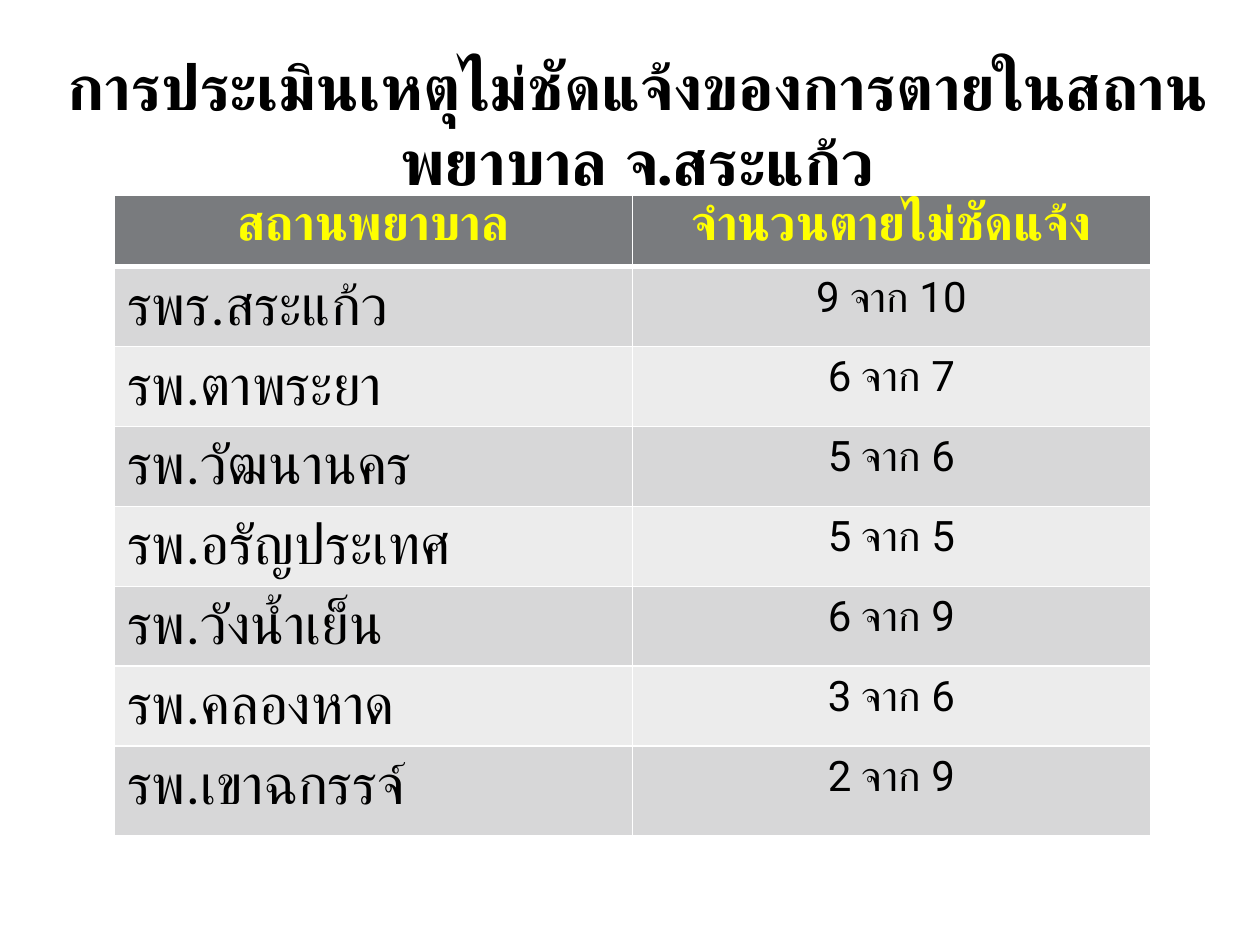
from typing import NamedTuple

from lxml.etree import SubElement
from pptx import Presentation
from pptx.dml.color import RGBColor
from pptx.enum.lang import MSO_LANGUAGE_ID as Lang
from pptx.enum.text import MSO_ANCHOR as Anchor, PP_ALIGN as Align
from pptx.oxml.ns import qn
from pptx.util import Inches, Pt

COLORS = {
    "text": "000000",
    "header_text": "FFFF00",
    "header": "797B7E",
    "odd_row": "D7D7D8",
    "even_row": "ECECEC",
    "border": "FFFFFF",
}


class Hospital(NamedTuple):
    name: str
    unclear: int
    deaths: int
    height: float = 0.5


HEADINGS = ("สถานพยาบาล", "จำนวนตายไม่ชัดแจ้ง")
HOSPITALS = (
    Hospital("รพร.สระแก้ว", 9, 10),
    Hospital("รพ.ตาพระยา", 6, 7),
    Hospital("รพ.วัฒนานคร", 5, 6),
    Hospital("รพ.อรัญประเทศ", 5, 5),
    Hospital("รพ.วังน้ำเย็น", 6, 9),
    Hospital("รพ.คลองหาด", 3, 6, 0.6),
    Hospital("รพ.เขาฉกรรจ์", 2, 9, 0.71),
)


def write(frame, text: str, *, size: float, font: str = "Roboto", color: str = "text",
          bold: bool = False, align: Align = Align.CENTER) -> None:
    paragraph = frame.paragraphs[0]
    paragraph.alignment = align
    run = paragraph.add_run()
    run.text = text
    run.font.name = font
    run.font.size = Pt(size)
    run.font.bold = bold
    run.font.language_id = Lang.THAI
    run.font.color.rgb = RGBColor.from_string(COLORS[color])


def paint_cell(cell, fill: str, top: float = 1, bottom: float = 1) -> None:
    cell.fill.solid()
    cell.fill.fore_color.rgb = RGBColor.from_string(COLORS[fill])
    properties = cell._tc.get_or_add_tcPr()
    widths = {"a:lnL": 1, "a:lnR": 1, "a:lnT": top, "a:lnB": bottom}
    for position, (side, width) in enumerate(widths.items()):
        line = SubElement(properties, qn(side), w=str(Pt(width)))
        solid = SubElement(line, qn("a:solidFill"))
        SubElement(solid, qn("a:srgbClr"), val=COLORS["border"])
        properties.insert(position, line)


def add_title(slide) -> None:
    frame = slide.shapes.add_textbox(
        Inches(0.12), Inches(0.4), Inches(9.88), Inches(1.15)).text_frame
    frame.word_wrap = True
    frame.vertical_anchor = Anchor.MIDDLE
    write(frame, "การประเมินเหตุไม่ชัดแจ้งของการตายในสถานพยาบาล จ.สระแก้ว",
          size=36, font="Karla", bold=True)


def add_hospital_table(slide) -> None:
    heights = [0.5] + [hospital.height for hospital in HOSPITALS]
    table = slide.shapes.add_table(
        len(heights), len(HEADINGS), Inches(0.91), Inches(1.55),
        Inches(8.22), Inches(sum(heights))).table
    for row, height in zip(table.rows, heights):
        row.height = Inches(height)
    for column, heading in enumerate(HEADINGS):
        cell = table.cell(0, column)
        paint_cell(cell, "header", bottom=3)
        write(cell.text_frame, heading, size=28, color="header_text", bold=True)
    for number, hospital in enumerate(HOSPITALS, start=1):
        name, count = table.cell(number, 0), table.cell(number, 1)
        for cell in (name, count):
            paint_cell(cell, "odd_row" if number % 2 else "even_row",
                       top=3 if number == 1 else 1)
        write(name.text_frame, hospital.name, size=32, align=Align.LEFT)
        write(count.text_frame, f"{hospital.unclear} จาก {hospital.deaths}", size=24)


def main() -> None:
    """Build the slide on unclear causes of death by hospital."""
    deck = Presentation()
    deck.slide_width, deck.slide_height = Inches(10), Inches(7.5)
    slide = deck.slides.add_slide(deck.slide_layouts[6])
    add_title(slide)
    add_hospital_table(slide)
    deck.save("out.pptx")


if __name__ == "__main__":
    main()
